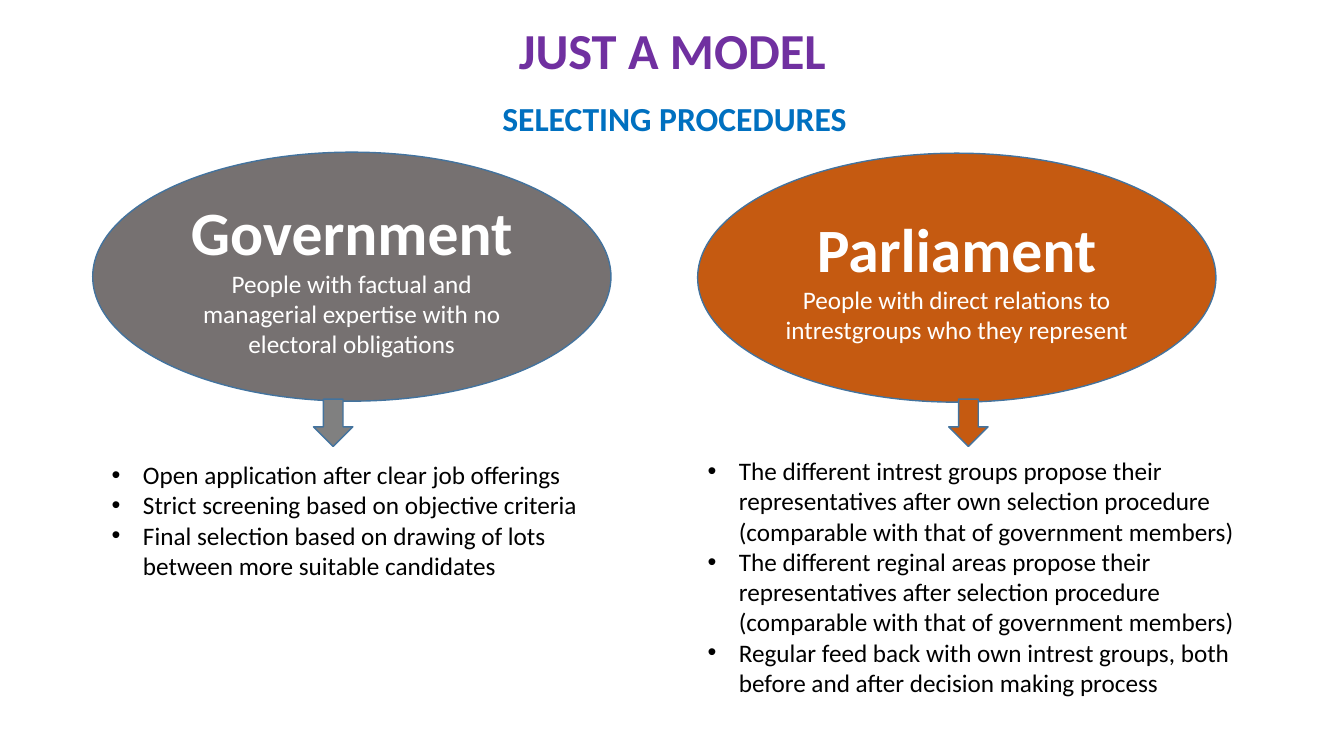
"""Build a slide comparing how government and parliament members are selected."""
from lxml import etree
from pptx import Presentation
from pptx.dml.color import RGBColor
from pptx.enum.shapes import MSO_SHAPE
from pptx.enum.text import MSO_ANCHOR, PP_ALIGN
from pptx.oxml.ns import qn
from pptx.util import Inches, Pt

OVAL, DOWN_ARROW = MSO_SHAPE.OVAL, MSO_SHAPE.DOWN_ARROW
TOP, MIDDLE, BOTTOM = MSO_ANCHOR.TOP, MSO_ANCHOR.MIDDLE, MSO_ANCHOR.BOTTOM
LEFT, CENTER = PP_ALIGN.LEFT, PP_ALIGN.CENTER
PURPLE = RGBColor(0x70, 0x30, 0xA0)
BLUE = RGBColor(0x00, 0x70, 0xC0)
OUTLINE = RGBColor(0x43, 0x73, 0x9E)
WARM_GRAY = RGBColor(0x76, 0x71, 0x71)
GRAY = RGBColor(0x80, 0x80, 0x80)
ORANGE = RGBColor(0xC5, 0x5A, 0x11)
WHITE = RGBColor(0xFF, 0xFF, 0xFF)
BLACK = RGBColor(0x00, 0x00, 0x00)
INDENT = Inches(0.31)

deck = Presentation()
deck.slide_width, deck.slide_height = Inches(13.33), Inches(7.5)
slide = deck.slides.add_slide(deck.slide_layouts[6])


def share(left, top, width, height):
    """Turn percentages of the slide into lengths."""
    sides = (deck.slide_width, deck.slide_height) * 2
    return [int(side * part / 100) for side, part in zip(sides, (left, top, width, height))]


def write(holder, anchor, align, lines, spacing=1.0):
    """Fill a shape with (text, font format) lines and return its paragraphs."""
    frame = holder.text_frame
    frame.word_wrap = True
    frame.vertical_anchor = anchor
    for index, (text, font_format) in enumerate(lines):
        paragraph = frame.add_paragraph() if index else frame.paragraphs[0]
        paragraph.alignment = align
        paragraph.line_spacing = spacing
        run = paragraph.add_run()
        run.text = text
        run.font.color.rgb = font_format["color"]
        for key in ("size", "bold"):
            setattr(run.font, key, font_format[key])
        run.font.name = "Calibri"
    return frame.paragraphs


TITLE = {"size": Pt(36), "bold": True, "color": PURPLE}
SUBTITLE = {"size": Pt(24), "bold": True, "color": BLUE}
BODY_NAME = {"size": Pt(44), "bold": True, "color": WHITE}
MEMBERS = {"size": Pt(18), "bold": False, "color": WHITE}
STEP = {"size": Pt(18), "bold": False, "color": BLACK}

headings = [
    ("JUST A MODEL", TITLE, BOTTOM, (12.53, 2.13, 75, 9.2)),
    ("SELECTING PROCEDURES", SUBTITLE, TOP, (6.9, 12.93, 86.57, 79.6)),
]
for text, font_format, anchor, place in headings:
    heading = slide.shapes.add_textbox(*share(*place))
    write(heading, anchor, CENTER, [(text, font_format)], 0.9)

bodies = [
    {
        "name": "Government",
        "members": "People with factual and managerial expertise with no electoral obligations",
        "oval": (6.9, 20.13), "oval_color": WARM_GRAY,
        "arrow_left": 23.33, "arrow_color": GRAY,
        "steps_place": (7.58, 60.13, 40.44, 17.47),
        "steps": [
            "Open application after clear job offerings",
            "Strict screening based on objective criteria",
            "Final selection based on drawing of lots between more suitable candidates",
        ],
    },
    {
        "name": "Parliament",
        "members": "People with direct relations to intrestgroups who they represent",
        "oval": (51.91, 20.27), "oval_color": ORANGE,
        "arrow_left": 70.59, "arrow_color": ORANGE,
        "steps_place": (51.91, 59.6, 41.56, 37.73),
        "steps": [
            "The different intrest groups propose their representatives after own "
            "selection procedure (comparable with that of government members)",
            "The different reginal areas propose their representatives after "
            "selection procedure (comparable with that of government members)",
            "Regular feed back with own intrest groups, both before and after "
            "decision making process",
        ],
    },
]
for body in bodies:
    oval = slide.shapes.add_shape(OVAL, *share(*body["oval"], 38.56, 32.93))
    arrow = slide.shapes.add_shape(DOWN_ARROW, *share(body["arrow_left"], 52.8, 2.93, 6.27))
    for part, color in ((oval, body["oval_color"]), (arrow, body["arrow_color"])):
        part.shadow.inherit = False
        part.fill.solid()
        part.fill.fore_color.rgb = color
        part.line.color.rgb = OUTLINE
        part.line.width = Pt(1)
    write(oval, MIDDLE, CENTER, [(body["name"], BODY_NAME), (body["members"], MEMBERS)])

    steps = slide.shapes.add_textbox(*share(*body["steps_place"]))
    for paragraph in write(steps, TOP, LEFT, [(step, STEP) for step in body["steps"]]):
        properties = paragraph._p.get_or_add_pPr()
        properties.set("marL", str(INDENT))
        properties.set("indent", str(-INDENT))
        etree.SubElement(properties, qn("a:buFont"), typeface="Arial")
        etree.SubElement(properties, qn("a:buChar"), char="•")

deck.save("out.pptx")
